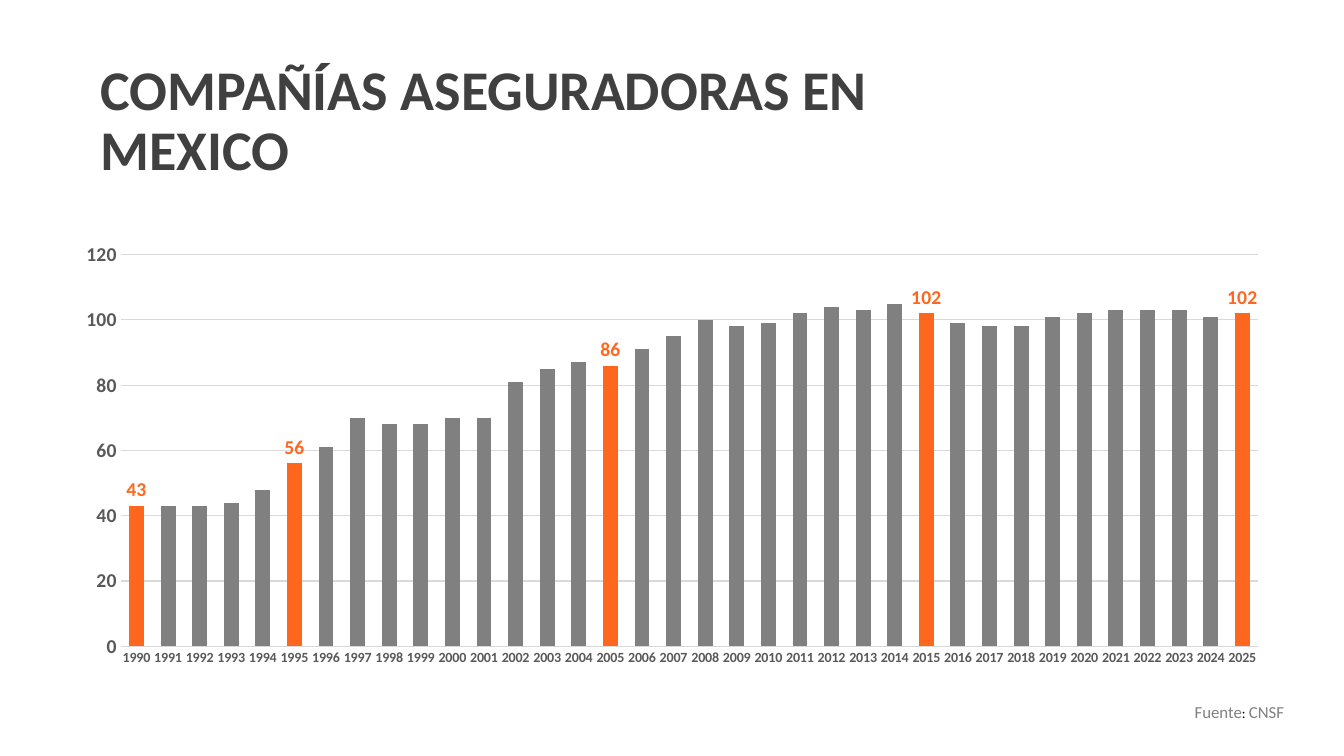
from lxml import etree
from pptx import Presentation
from pptx.chart.data import CategoryChartData
from pptx.dml.color import RGBColor
from pptx.enum.chart import XL_CHART_TYPE as ChartType, XL_LABEL_POSITION as LabelPos, XL_TICK_MARK as Tick
from pptx.enum.text import MSO_ANCHOR, PP_ALIGN
from pptx.oxml.ns import qn
from pptx.util import Cm, Pt

TITLE = "COMPAÑÍAS ASEGURADORAS EN MEXICO"
SOURCE = [("Fuente", 12, "808080"), (": ", 10, "000000"), ("CNSF", 12, "808080")]
FIRST_YEAR = 1990
INSURERS = [43, 43, 43, 44, 48, 56, 61, 70, 68, 68, 70, 70,
            81, 85, 87, 86, 91, 95, 100, 98, 99, 102, 104, 103,
            105, 102, 99, 98, 98, 101, 102, 103, 103, 103, 101, 102]
MILESTONES = [1990, 1995, 2005, 2015, 2025]
PLOT_AREA = {"x": 0.047, "y": 0.185, "w": 0.935, "h": 0.7}
GREY, ORANGE, DARK, AXIS_TEXT, RULE = "808080", "FF671F", "404040", "595959", "D9D9D9"


def rgb(hex_color):
    return RGBColor.from_string(hex_color)


def set_font(font, color, **values):
    for name, value in {"name": "Calibri", **values}.items():
        setattr(font, name, value)
    font.color.rgb = rgb(color)


def set_line(line, color):
    line.color.rgb = rgb(color)
    line.width = Pt(0.75)


def fill(fmt, color):
    fmt.fill.solid()
    fmt.fill.fore_color.rgb = rgb(color)


def add_text(s, box, runs, anchor, **para):
    tf = s.shapes.add_textbox(*map(Cm, box)).text_frame
    tf.word_wrap = True
    tf.vertical_anchor = anchor
    p = tf.paragraphs[0]
    for name, value in para.items():
        setattr(p, name, value)
    for text, size, color, bold in runs:
        r = p.add_run()
        r.text = text
        set_font(r.font, color, size=Pt(size), bold=bold)


def place_plot(chart):
    """Fix the inner plot area as fractions of the chart frame."""
    plot_area = chart.plots[0]._element.getparent()
    for old in plot_area.findall(qn("c:layout")):
        plot_area.remove(old)
    layout = etree.Element(qn("c:layout"))
    manual = etree.SubElement(layout, qn("c:manualLayout"))
    settings = {"layoutTarget": "inner", "xMode": "edge", "yMode": "edge", **PLOT_AREA}
    for tag, value in settings.items():
        etree.SubElement(manual, qn("c:" + tag)).set("val", str(value))
    plot_area.insert(0, layout)


def add_insurer_chart(s):
    data = CategoryChartData()
    data.categories = [str(FIRST_YEAR + i) for i in range(len(INSURERS))]
    data.add_series("Series 1", INSURERS)
    chart = s.shapes.add_chart(ChartType.COLUMN_CLUSTERED, Cm(1.6), Cm(3.81),
                               Cm(30.66), Cm(14.1), data).chart
    chart.has_legend = chart.has_title = False
    set_font(chart.font, "000000", name="Roboto", size=Pt(10))
    place_plot(chart)

    plot = chart.plots[0]
    plot.gap_width, plot.overlap, plot.vary_by_categories = 112, -27, False
    for axis, size in ((chart.category_axis, 10), (chart.value_axis, 14)):
        axis.major_tick_mark = axis.minor_tick_mark = Tick.NONE
        set_font(axis.tick_labels.font, AXIS_TEXT, size=Pt(size), bold=True)
    set_line(chart.category_axis.format.line, RULE)
    values = chart.value_axis
    values.minimum_scale, values.maximum_scale, values.major_unit = 0, 120, 20
    values.format.line.fill.background()
    set_line(values.major_gridlines.format.line, RULE)

    bars = plot.series[0]
    fill(bars.format, GREY)
    bars.data_labels.show_value = False
    for year in MILESTONES:
        point = bars.points[year - FIRST_YEAR]
        fill(point.format, ORANGE)
        label = point.data_label
        set_font(label.font, ORANGE, size=Pt(14), bold=True)
        label.position = LabelPos.OUTSIDE_END


def main():
    prs = Presentation()
    prs.slide_width, prs.slide_height = Cm(33.87), Cm(19.05)
    s = prs.slides.add_slide(prs.slide_layouts[6])
    add_insurer_chart(s)
    add_text(s, (2.28, 1.9, 20.12, 2.36), [(TITLE, 40, DARK, True)],
             MSO_ANCHOR.MIDDLE, line_spacing=0.9)
    add_text(s, (25.98, 17.55, 6.63, 0.76), [(*run, False) for run in SOURCE],
             MSO_ANCHOR.TOP, alignment=PP_ALIGN.RIGHT)
    prs.save("out.pptx")


if __name__ == "__main__":
    main()
